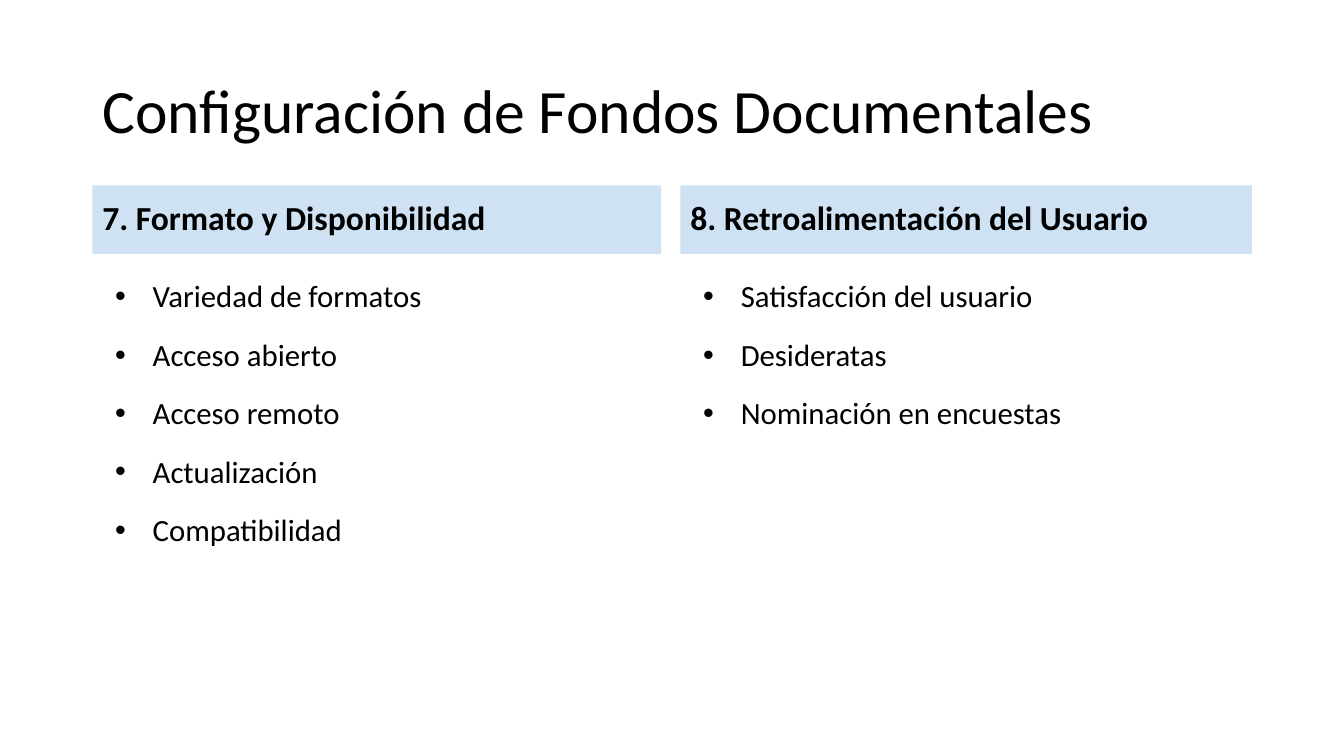
from dataclasses import dataclass

from lxml.etree import SubElement
from pptx import Presentation
from pptx.dml.color import RGBColor
from pptx.enum.shapes import MSO_SHAPE
from pptx.enum.text import MSO_ANCHOR, PP_ALIGN
from pptx.oxml.ns import qn
from pptx.util import Cm, Pt


@dataclass(frozen=True)
class Theme:
    font: str = "Calibri"
    ink: RGBColor = RGBColor(0x00, 0x00, 0x00)
    band: RGBColor = RGBColor(0xCF, 0xE2, 0xF3)
    title_size: int = 44
    heading_size: int = 24
    item_size: int = 22
    item_gap: int = 18
    line_spacing: float = 0.9


class SlideBuilder:
    def __init__(self, slide, theme):
        self.slide = slide
        self.theme = theme

    def style(self, para, size, bold=False):
        para.alignment = PP_ALIGN.LEFT
        para.line_spacing = self.theme.line_spacing
        for span in para.runs:
            span.font.name = self.theme.font
            span.font.size = Pt(size)
            span.font.bold = bold
            span.font.color.rgb = self.theme.ink

    def fill_text(self, box, text, size, anchor, bold=False):
        frame = box.text_frame
        frame.word_wrap = True
        frame.vertical_anchor = anchor
        frame.text = text
        for para in frame.paragraphs:
            self.style(para, size, bold)

    def title(self, text, left, top, width, height):
        box = self.slide.shapes.add_textbox(Cm(left), Cm(top), Cm(width), Cm(height))
        self.fill_text(box, text, self.theme.title_size, MSO_ANCHOR.MIDDLE)

    def heading(self, text, left, top, width, height):
        band = self.slide.shapes.add_shape(
            MSO_SHAPE.RECTANGLE, Cm(left), Cm(top), Cm(width), Cm(height)
        )
        band.shadow.inherit = False
        band.fill.solid()
        band.fill.fore_color.rgb = self.theme.band
        band.line.fill.background()
        self.fill_text(band, text, self.theme.heading_size, MSO_ANCHOR.MIDDLE, bold=True)

    def bullets(self, items, left, top, width, height):
        box = self.slide.shapes.add_textbox(Cm(left), Cm(top), Cm(width), Cm(height))
        self.fill_text(box, "\n".join(items), self.theme.item_size, MSO_ANCHOR.TOP)
        for index, para in enumerate(box.text_frame.paragraphs):
            if index:
                para.space_before = Pt(self.theme.item_gap)
            self.add_bullet(para)

    def add_bullet(self, para):
        properties = para._p.get_or_add_pPr()
        properties.set("marL", str(Cm(1.27)))
        properties.set("indent", str(Cm(-0.95)))
        color = SubElement(properties, qn("a:buClr"))
        SubElement(color, qn("a:srgbClr"), val=str(self.theme.ink))
        SubElement(properties, qn("a:buFont"), typeface="Arial")
        SubElement(properties, qn("a:buChar"), char="•")


def main():
    deck = Presentation()
    deck.slide_width = Cm(33.87)
    deck.slide_height = Cm(19.05)
    page = SlideBuilder(deck.slides.add_slide(deck.slide_layouts[6]), Theme())

    page.title("Configuración de Fondos Documentales", 2.33, 1.01, 29.21, 3.68)
    columns = [
        (
            2.33,
            14.33,
            "7. Formato y Disponibilidad",
            [
                "Variedad de formatos",
                "Acceso abierto",
                "Acceso remoto",
                "Actualización",
                "Compatibilidad",
            ],
        ),
        (
            17.15,
            14.4,
            "8. Retroalimentación del Usuario",
            ["Satisfacción del usuario", "Desideratas", "Nominación en encuestas"],
        ),
    ]
    for left, width, heading, items in columns:
        page.heading(heading, left, 4.67, width, 1.73)
        page.bullets(items, left, 6.96, width, 10.24)

    deck.save("out.pptx")


if __name__ == "__main__":
    main()
